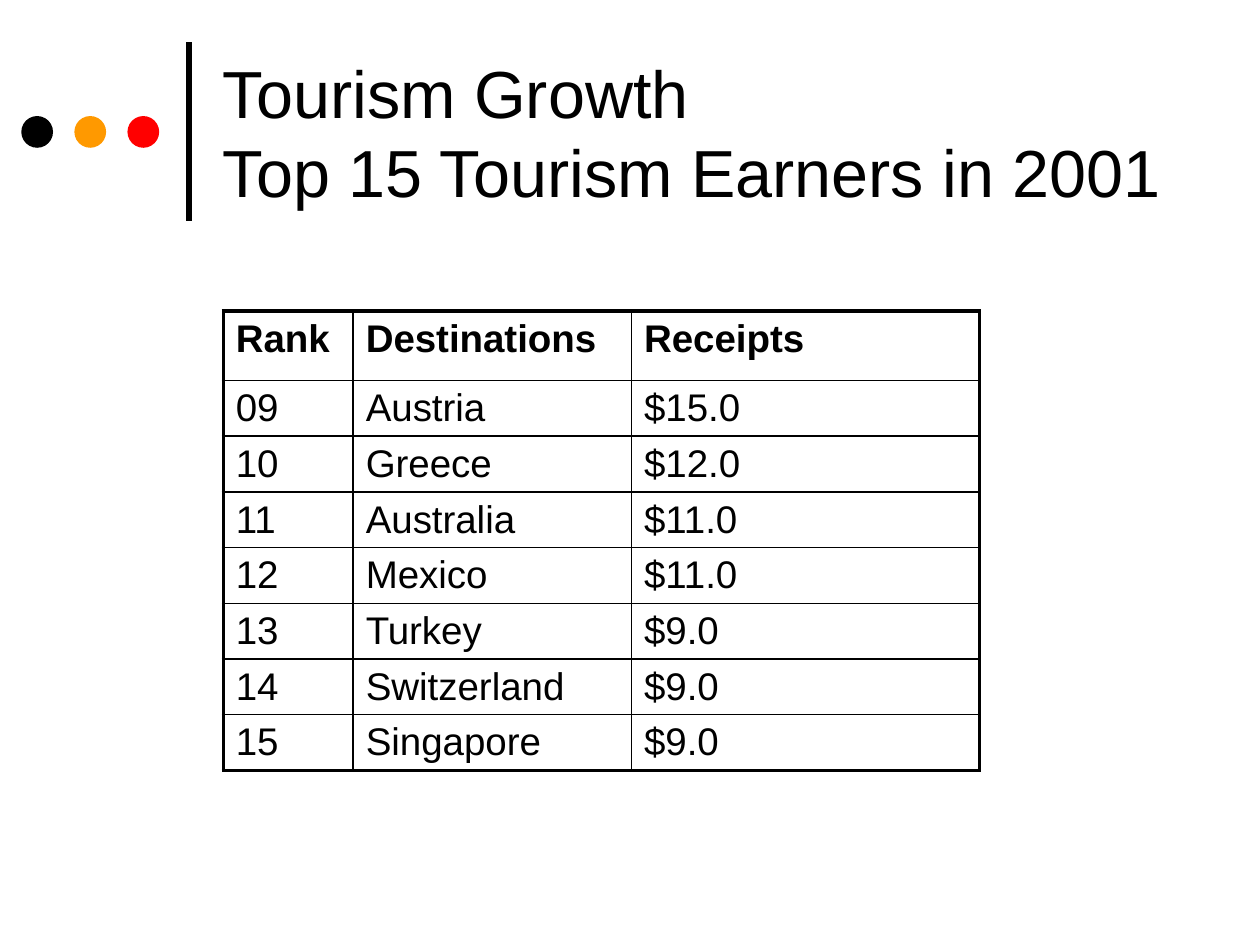
from dataclasses import dataclass

from lxml.etree import SubElement
from pptx import Presentation
from pptx.dml.color import RGBColor
from pptx.enum.shapes import MSO_CONNECTOR as Connector, MSO_SHAPE as Shape
from pptx.enum.text import MSO_ANCHOR as Anchor, MSO_AUTO_SIZE as AutoSize, PP_ALIGN as Align
from pptx.oxml.ns import qn
from pptx.util import Cm, Pt


@dataclass(frozen=True)
class Theme:
    font: str = "Arial"
    ink: str = "000000"
    paper: str = "FFFFFF"
    dots: tuple = ("000000", "FF9900", "FF0000")
    title_size: float = 38
    table_size: float = 22
    rule: float = 3
    frame: float = 2.25
    grid: float = 1


THEME = Theme()
HEADINGS = ("Rank", "Destinations", "Receipts")
EARNERS = (
    ("09", "Austria", "$15.0"),
    ("10", "Greece", "$12.0"),
    ("11", "Australia", "$11.0"),
    ("12", "Mexico", "$11.0"),
    ("13", "Turkey", "$9.0"),
    ("14", "Switzerland", "$9.0"),
    ("15", "Singapore", "$9.0"),
)
COLUMN_WIDTHS = (2.62, 5.61, 7.01)
HEADING_HEIGHT, EARNER_HEIGHT = 1.4, 1.12


def apply_format(target, values):
    for attribute, value in values.items():
        setattr(target, attribute, value)


def style_font(font, size, bold=False):
    apply_format(font, {"name": THEME.font, "size": Pt(size), "bold": bold})
    font.color.rgb = RGBColor.from_string(THEME.ink)


def add_rule(slide):
    rule = slide.shapes.add_connector(Connector.STRAIGHT, Cm(3.81), Cm(4.45), Cm(3.81), Cm(0.84))
    rule.line.width = Pt(THEME.rule)
    rule.line.color.rgb = RGBColor.from_string(THEME.ink)
    SubElement(rule.line._get_or_add_ln().getparent(), qn("a:effectLst"))


def add_dots(slide):
    for position, color in enumerate(THEME.dots):
        dot = slide.shapes.add_shape(
            Shape.OVAL, Cm(0.43 + 1.07 * position), Cm(2.34), Cm(0.64), Cm(0.64))
        dot.shadow.inherit = False
        dot.fill.solid()
        dot.fill.fore_color.rgb = RGBColor.from_string(color)
        dot.line.fill.background()


def write_title(slide, wording):
    title = slide.shapes.title
    apply_format(title, {"left": Cm(4.24), "top": Cm(0.53), "width": Cm(19.48), "height": Cm(4.24)})
    apply_format(title.text_frame, {
        "text": wording, "word_wrap": True,
        "auto_size": AutoSize.NONE, "vertical_anchor": Anchor.MIDDLE})
    heading = title.text_frame.paragraphs[0]
    heading.alignment = Align.LEFT
    for run in heading.runs:
        style_font(run.font, THEME.title_size)


def draw_borders(cell, widths):
    properties = cell._tc.get_or_add_tcPr()
    for position, (side, width) in enumerate(widths.items()):
        border = properties.makeelement(qn(f"a:{side}"), {"w": str(Pt(width))})
        fill = SubElement(border, qn("a:solidFill"))
        SubElement(fill, qn("a:srgbClr"), val=THEME.ink)
        properties.insert(position, border)


def add_earners_table(slide):
    entries = (HEADINGS, *EARNERS)
    heights = (HEADING_HEIGHT, *[EARNER_HEIGHT] * len(EARNERS))
    table = slide.shapes.add_table(
        len(entries), len(HEADINGS), Cm(4.5), Cm(6.27),
        Cm(sum(COLUMN_WIDTHS)), Cm(sum(heights))).table
    apply_format(table, {"first_row": False, "horz_banding": False})
    for column, width in zip(table.columns, COLUMN_WIDTHS):
        column.width = Cm(width)
    last_row, last_column = len(entries) - 1, len(HEADINGS) - 1
    for r, (entry, height) in enumerate(zip(entries, heights)):
        table.rows[r].height = Cm(height)
        for c, wording in enumerate(entry):
            cell = table.cell(r, c)
            cell.text = wording
            cell.fill.solid()
            cell.fill.fore_color.rgb = RGBColor.from_string(THEME.paper)
            style_font(cell.text_frame.paragraphs[0].runs[0].font, THEME.table_size, bold=r == 0)
            outer = {"lnL": c == 0, "lnR": c == last_column, "lnT": r == 0, "lnB": r == last_row}
            draw_borders(cell, {
                side: THEME.frame if on_edge else THEME.grid for side, on_edge in outer.items()})


def main():
    deck = Presentation()
    apply_format(deck, {"slide_width": Cm(25.4), "slide_height": Cm(19.05)})
    slide = deck.slides.add_slide(deck.slide_layouts.get_by_name("Title Only"))
    add_rule(slide)
    add_dots(slide)
    write_title(slide, "Tourism Growth\vTop 15 Tourism Earners in 2001")
    add_earners_table(slide)
    deck.save("out.pptx")


if __name__ == "__main__":
    main()
